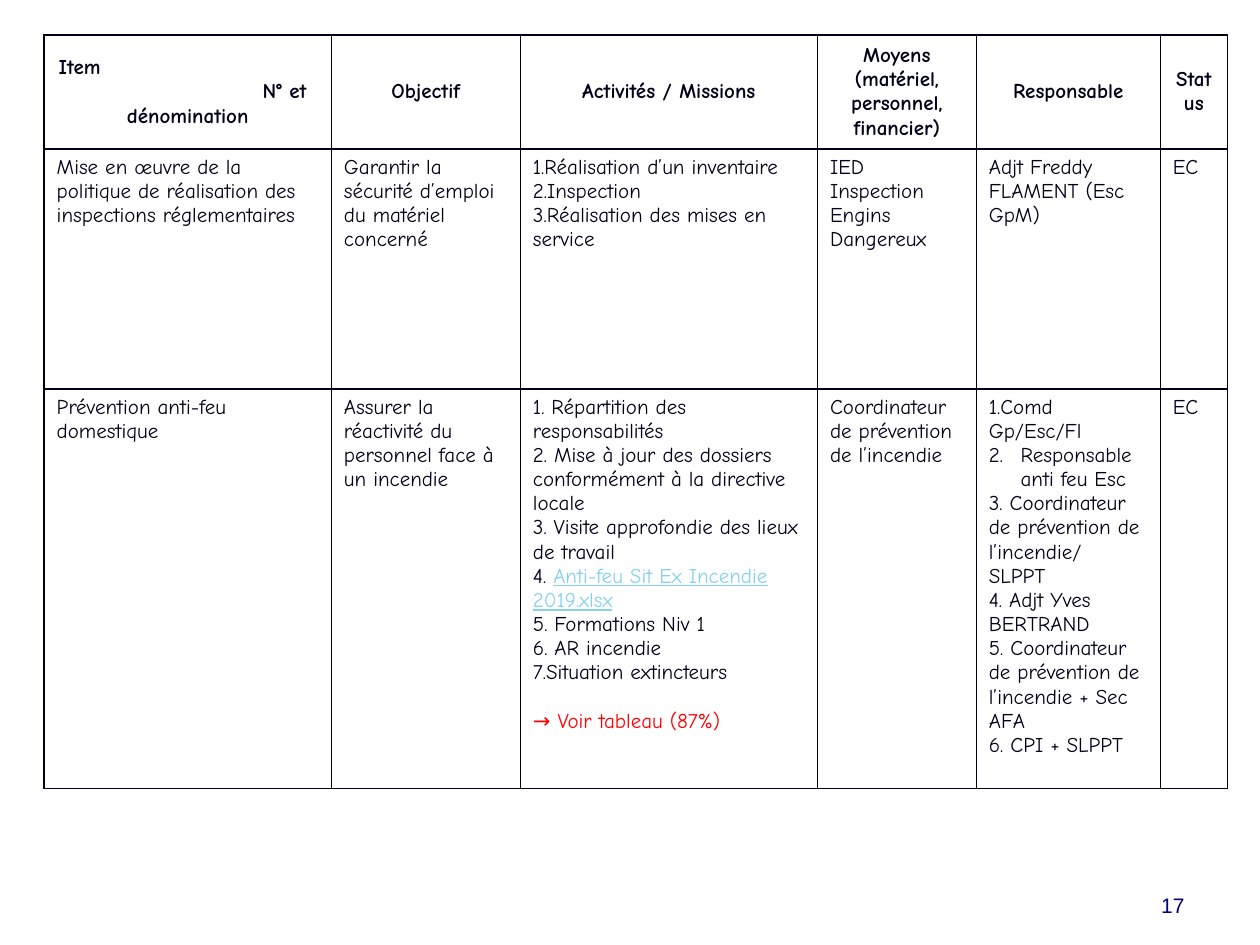
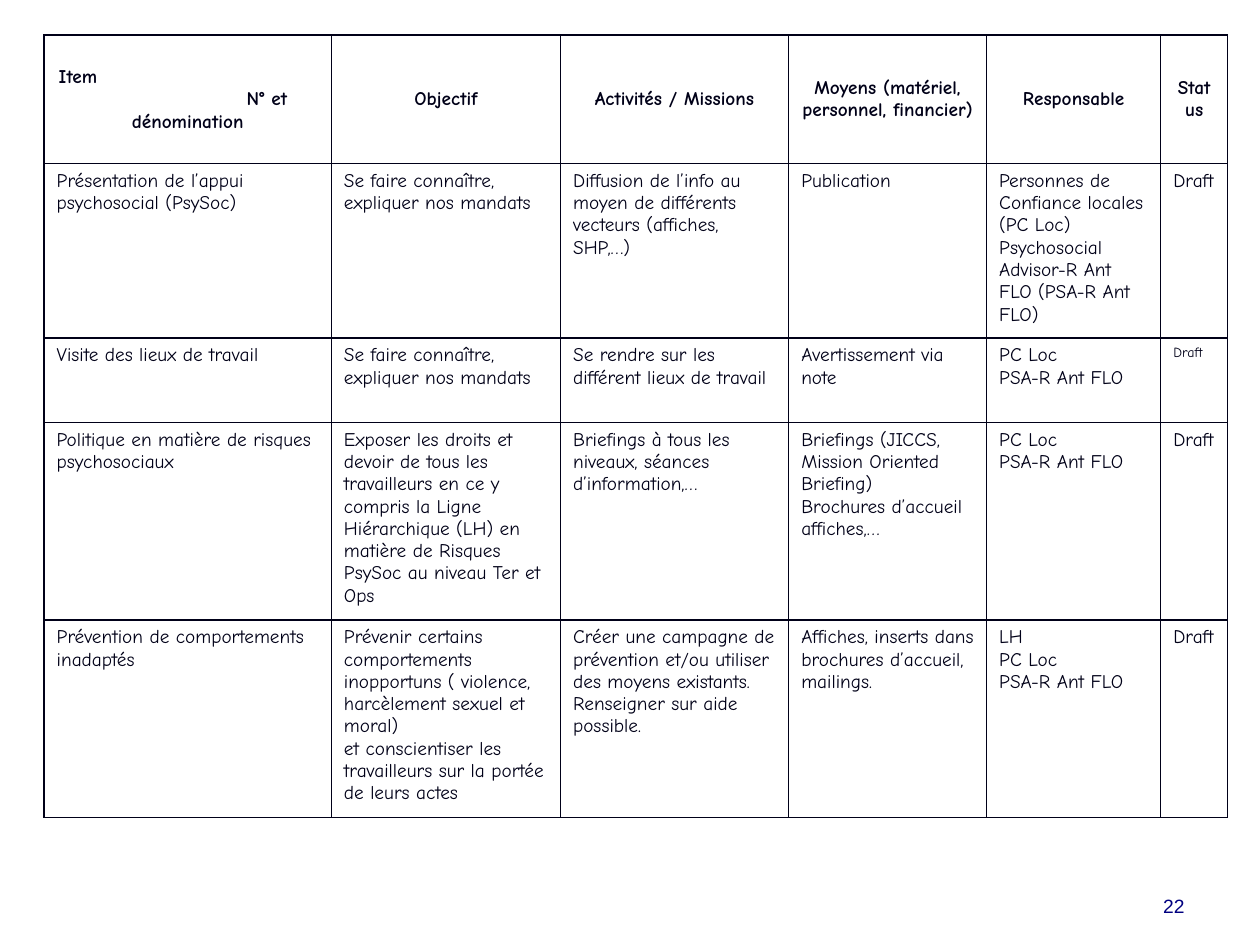
"""Build two action-plan pages, each with a bordered table and a page number."""
from dataclasses import dataclass, field

from lxml import etree
from pptx import Presentation
from pptx import util as u
from pptx.dml.color import RGBColor
from pptx.enum import text
from pptx.oxml import ns


@dataclass(frozen=True)
class Theme:
    """Colours, fonts and measures shared by the pages."""
    ink: str = "000018"
    link: str = "86D1EC"
    alert: str = "FF0000"
    number: str = "000080"
    table_font: str = "Comic Neue"
    number_font: str = "Arial"
    small: int = 8
    rule: float = 1
    blank_line: float = 13.8


@dataclass
class Line:
    """One paragraph of a cell, with its numbering and its look."""
    text: str
    lead: str = ""
    start: int = 0
    left: float = 0
    hang: float = 0
    para: dict = field(default_factory=dict)
    look: dict = field(default_factory=dict)


THEME = Theme()
CENTER = {"alignment": text.PP_ALIGN.CENTER}
HEADINGS = ["Objectif", "Activités / Missions",
            "Moyens (matériel, personnel, financier)", "Responsable", "Status"]


def apply(target, formats):
    """Set every attribute named in a dict of format values."""
    for name, value in formats.items():
        setattr(target, name, value)


def numbered(*entries):
    """Number the entries from one, without an indent."""
    return [Line(entry, start=1) if isinstance(entry, str) else entry
            for entry in entries]


class Deck:
    """Hold the theme and the current page, and add elements to it."""

    def __init__(self, theme):
        """Open an empty deck in the 4:3 format."""
        self.theme = theme
        self.file = Presentation()
        apply(self.file, {"slide_width": u.Cm(25.4), "slide_height": u.Cm(19.05)})
        self.page = None

    def add_page(self):
        """Start a blank page."""
        self.page = self.file.slides.add_slide(self.file.slide_layouts[6])

    def add_span(self, para, words, color, **formats):
        """Add a formatted run of text."""
        span = para.add_run()
        span.text = words
        apply(span.font, formats)
        span.font.color.rgb = RGBColor.from_string(color)

    def set_indent(self, para, line):
        """Set the indent and the automatic number of a paragraph."""
        props = para._p.get_or_add_pPr()
        props.set("marL", str(u.Cm(line.left)))
        props.set("indent", str(u.Cm(-line.hang)))
        if line.start:
            bullet = etree.SubElement(props, ns.qn("a:buAutoNum"), type="arabicPeriod")
            if line.start > 1:
                bullet.set("startAt", str(line.start))

    def fill_cell(self, cell, content, size, bold):
        """Write the lines of a cell, one paragraph each."""
        lines = [content] if isinstance(content, (str, Line)) else content
        frame = cell.text_frame
        for index, line in enumerate(lines):
            line = Line(line) if isinstance(line, str) else line
            para = frame.add_paragraph() if index else frame.paragraphs[0]
            self.set_indent(para, line)
            apply(para, line.para)
            base = {"color": self.theme.ink, "size": u.Pt(size), "bold": bold,
                    "name": self.theme.table_font}
            if line.lead:
                self.add_span(para, line.lead, **base)
            self.add_span(para, line.text, **{**base, **line.look})

    def add_borders(self, cell):
        """Draw the four sides of a cell and leave it unfilled."""
        props = cell._tc.get_or_add_tcPr()
        for side in ("lnL", "lnR", "lnT", "lnB"):
            edge = etree.SubElement(props, ns.qn(f"a:{side}"),
                                    w=str(u.Pt(self.theme.rule)))
            paint = etree.SubElement(edge, ns.qn("a:solidFill"))
            etree.SubElement(paint, ns.qn("a:srgbClr"), val=self.theme.ink)
        cell.fill.background()

    def add_plan(self, widths, heights, item_indent, size, rows):
        """Add the table of actions under its heading row."""
        item = [Line("Item", left=0.04), Line("N° et", left=item_indent),
                Line("dénomination", para=CENTER)]
        heading = [item] + [Line(words, para=CENTER) for words in HEADINGS]
        table = self.page.shapes.add_table(
            len(heights), len(widths), u.Cm(0.89), u.Cm(0.71),
            u.Cm(sum(widths)), u.Cm(sum(heights))).table
        apply(table, {"first_row": False, "horz_banding": False})
        for column, width in zip(table.columns, widths):
            column.width = u.Cm(width)
        for row, height, contents in zip(table.rows, heights, [heading] + rows):
            row.height = u.Cm(height)
            is_heading = contents is heading
            for cell, content in zip(row.cells, contents):
                cell.vertical_anchor = (text.MSO_ANCHOR.MIDDLE if is_heading
                                        else text.MSO_ANCHOR.TOP)
                self.add_borders(cell)
                self.fill_cell(cell, content, size, is_heading)

    def add_number(self, number, size):
        """Add the page number at the bottom right."""
        box = self.page.shapes.add_textbox(u.Cm(18.21), u.Cm(17.35),
                                           u.Cm(5.92), u.Cm(1.27))
        apply(box.text_frame, {"word_wrap": True,
                               "vertical_anchor": text.MSO_ANCHOR.BOTTOM})
        para = box.text_frame.paragraphs[0]
        para.alignment = text.PP_ALIGN.RIGHT
        self.add_span(para, str(number), self.theme.number, size=u.Pt(size),
                      name=self.theme.number_font)


SAFETY_ROWS = [
    ["Mise en œuvre de la politique de réalisation des inspections réglementaires",
     "Garantir la sécurité d’emploi du matériel concerné",
     ["1.Réalisation d’un inventaire", "2.Inspection",
      "3.Réalisation des mises en service"],
     ["IED", "Inspection Engins Dangereux"],
     "Adjt Freddy FLAMENT (Esc GpM)",
     "EC"],
    ["Prévention anti-feu domestique",
     "Assurer la réactivité du personnel face à un incendie",
     numbered(" Répartition des responsabilités",
              " Mise à jour des dossiers conformément à la directive locale",
              " Visite approfondie des lieux de travail",
              Line("Anti-feu Sit Ex Incendie 2019.xlsx", lead=" ", start=1,
                   look={"color": THEME.link, "underline": True}),
              " Formations Niv 1", " AR incendie", "Situation extincteurs",
              Line("→ Voir tableau (87%)", look={"color": THEME.alert},
                   para={"space_before": u.Pt(THEME.blank_line)})),
     "Coordinateur de prévention de l’incendie",
     ["1.Comd Gp/Esc/Fl",
      Line("Responsable anti feu Esc", start=2, left=0.64, hang=0.64),
      "3. Coordinateur de prévention de l’incendie/", "SLPPT",
      "4. Adjt Yves BERTRAND",
      "5. Coordinateur de prévention de l’incendie + Sec AFA",
      "6. CPI + SLPPT"],
     "EC"],
]

KNOWN = "Se faire connaître, expliquer nos mandats"
CONTACTS = ["PC Loc", "PSA-R Ant FLO"]
WELLBEING_ROWS = [
    ["Présentation de l’appui psychosocial (PsySoc)",
     KNOWN,
     "Diffusion de l’info au moyen de différents vecteurs (affiches, SHP,…)",
     "Publication",
     "Personnes de Confiance locales (PC Loc) Psychosocial Advisor-R Ant FLO "
     "(PSA-R Ant FLO)",
     "Draft"],
    ["Visite des lieux de travail",
     KNOWN,
     "Se rendre sur les différent lieux de travail",
     "Avertissement via note",
     CONTACTS,
     Line("Draft", look={"size": u.Pt(THEME.small)})],
    ["Politique en matière de risques psychosociaux",
     "Exposer les droits et devoir de tous les travailleurs en ce y compris la "
     "Ligne Hiérarchique (LH) en matière de Risques PsySoc au niveau Ter et Ops",
     "Briefings à tous les niveaux, séances d’information,…",
     ["Briefings (JICCS, Mission Oriented Briefing)",
      "Brochures d’accueil affiches,…"],
     CONTACTS,
     "Draft"],
    ["Prévention de comportements inadaptés",
     ["Prévenir certains comportements inopportuns ( violence, harcèlement "
      "sexuel et moral)",
      "et conscientiser les travailleurs sur la portée de leurs actes"],
     "Créer une campagne de prévention et/ou utiliser des moyens existants. "
     "Renseigner sur aide possible.",
     "Affiches, inserts dans brochures d’accueil, mailings.",
     ["LH"] + CONTACTS,
     "Draft"],
]

PAGES = [
    (17, 12, [5.79, 3.81, 5.99, 3.2, 3.71, 1.35], [2.29, 4.84, 8.06], 4.15,
     SAFETY_ROWS),
    (22, 11, [5.79, 4.62, 4.6, 3.99, 3.51, 1.35], [2.59, 3.4, 1.7, 3.85, 3.85], 3.83,
     WELLBEING_ROWS),
]


def main():
    """Build every page and save the deck."""
    deck = Deck(THEME)
    for number, size, widths, heights, item_indent, rows in PAGES:
        deck.add_page()
        deck.add_plan(widths, heights, item_indent, size, rows)
        deck.add_number(number, size)
    deck.file.save("out.pptx")


if __name__ == "__main__":
    main()
